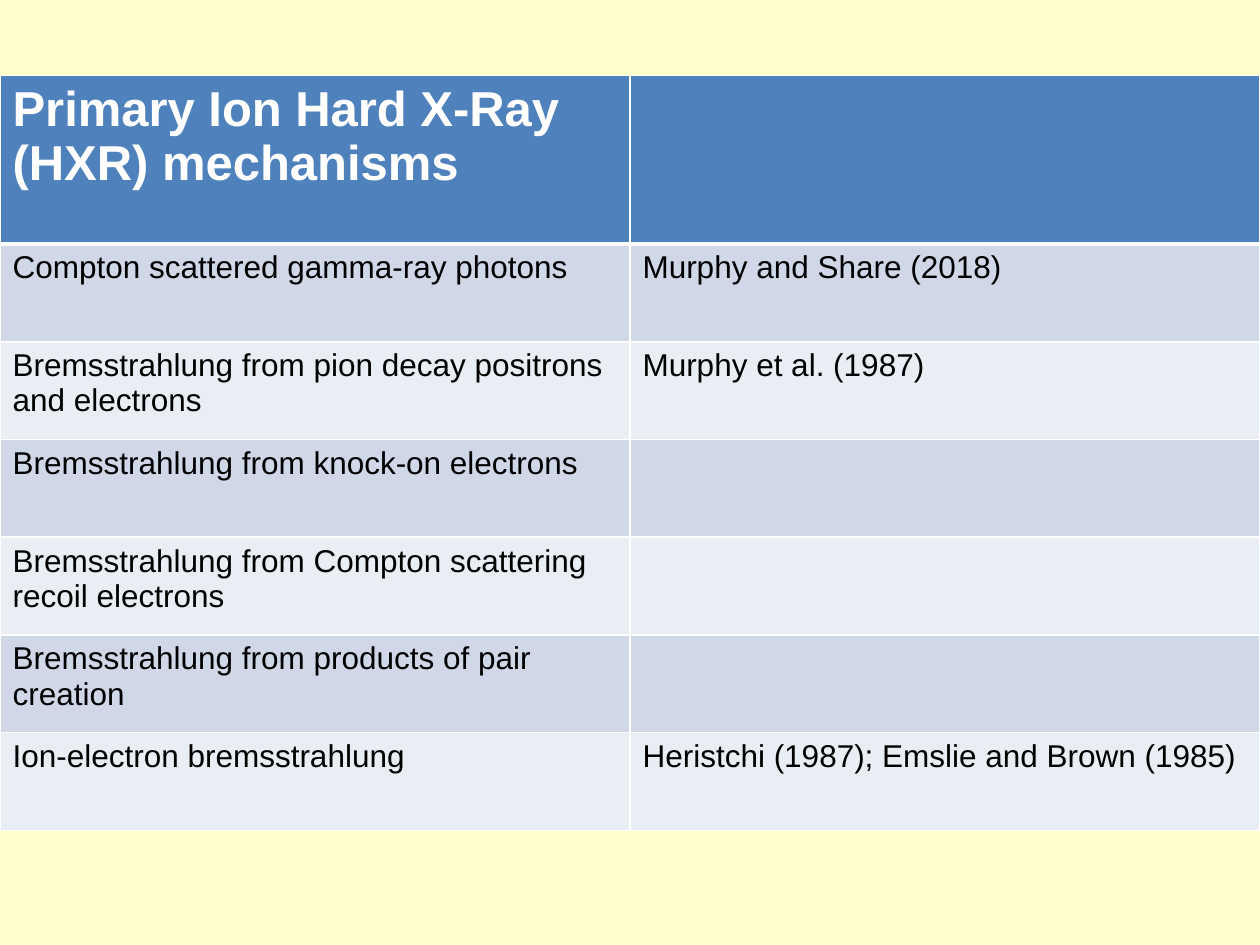
from dataclasses import dataclass

from lxml import etree
from pptx import Presentation
from pptx import util as u
from pptx.dml.color import RGBColor
from pptx.oxml import ns


@dataclass(frozen=True)
class Theme:
    font: str = "Arial"
    background: str = "FFFFCC"
    header: str = "4F81BD"
    bands: tuple = ("D0D8E8", "E9EDF4")
    rule: str = "FFFFFF"
    header_text: str = "FFFFFF"
    body_text: str = "000000"
    header_size: int = 28
    body_size: int = 18
    rule_width: int = 1
    header_rule_width: int = 3


def write(tf, content, *, font, size, color, bold=False):
    """Put one formatted paragraph in a text frame."""
    tf.word_wrap = True
    p = tf.paragraphs[0]
    p.font.size = u.Pt(size)
    if content:
        r = p.add_run()
        r.text = content
        r.font.name = font
        r.font.size = u.Pt(size)
        r.font.bold = bold
        r.font.color.rgb = RGBColor.from_string(color)


class Deck:
    """Holds the theme and the current slide."""

    def __init__(self, prs, theme):
        self.theme = theme
        self.s = prs.slides.add_slide(prs.slide_layouts[6])
        fill = self.s.background.fill
        fill.solid()
        fill.fore_color.rgb = RGBColor.from_string(theme.background)

    def borders(self, cell, **widths):
        """Draw cell edges; widths in points, keyed by L, R, T, B."""
        tc_pr = cell._tc.get_or_add_tcPr()
        for side in "LRTB":
            width = widths.get(side, self.theme.rule_width)
            ln = etree.SubElement(tc_pr, ns.qn(f"a:ln{side}"), w=str(u.Pt(width)))
            solid = etree.SubElement(ln, ns.qn("a:solidFill"))
            etree.SubElement(solid, ns.qn("a:srgbClr"), val=self.theme.rule)

    def table(self, rows, left, top, width, header_height, row_height):
        t = self.theme
        n_cols = len(rows[0])
        height = header_height + row_height * (len(rows) - 1)
        tbl = self.s.shapes.add_table(
            len(rows), n_cols, left, top, width, height).table
        for col in tbl.columns:
            col.width = width // n_cols
        for i, row in enumerate(rows):
            is_header = i == 0
            tbl.rows[i].height = header_height if is_header else row_height
            fill = t.header if is_header else t.bands[(i - 1) % 2]
            edges = {}
            if is_header:
                edges["B"] = t.header_rule_width
            elif i == 1:
                edges["T"] = t.header_rule_width
            for j, content in enumerate(row):
                cell = tbl.cell(i, j)
                self.borders(cell, **edges)
                cell.fill.solid()
                cell.fill.fore_color.rgb = RGBColor.from_string(fill)
                write(cell.text_frame, content, font=t.font, bold=is_header,
                      size=t.header_size if is_header else t.body_size,
                      color=t.header_text if is_header else t.body_text)


MECHANISMS = [
    ("Primary Ion Hard X-Ray (HXR) mechanisms", ""),
    ("Compton scattered gamma-ray photons", "Murphy and Share (2018)"),
    ("Bremsstrahlung from pion decay positrons and electrons",
     "Murphy et al. (1987)"),
    ("Bremsstrahlung from knock-on electrons", ""),
    ("Bremsstrahlung from Compton scattering recoil electrons", ""),
    ("Bremsstrahlung from products of pair creation", ""),
    ("Ion-electron bremsstrahlung",
     "Heristchi (1987); Emslie and Brown (1985)"),
]


def main():
    prs = Presentation()
    prs.slide_width, prs.slide_height = u.Cm(25.4), u.Cm(19.05)
    deck = Deck(prs, Theme())
    # Full-width table of mechanisms and their references
    deck.table(MECHANISMS, left=u.Cm(0), top=u.Cm(1.52), width=prs.slide_width,
               header_height=u.Cm(3.4), row_height=u.Cm(1.97))
    prs.save("out.pptx")


if __name__ == "__main__":
    main()
